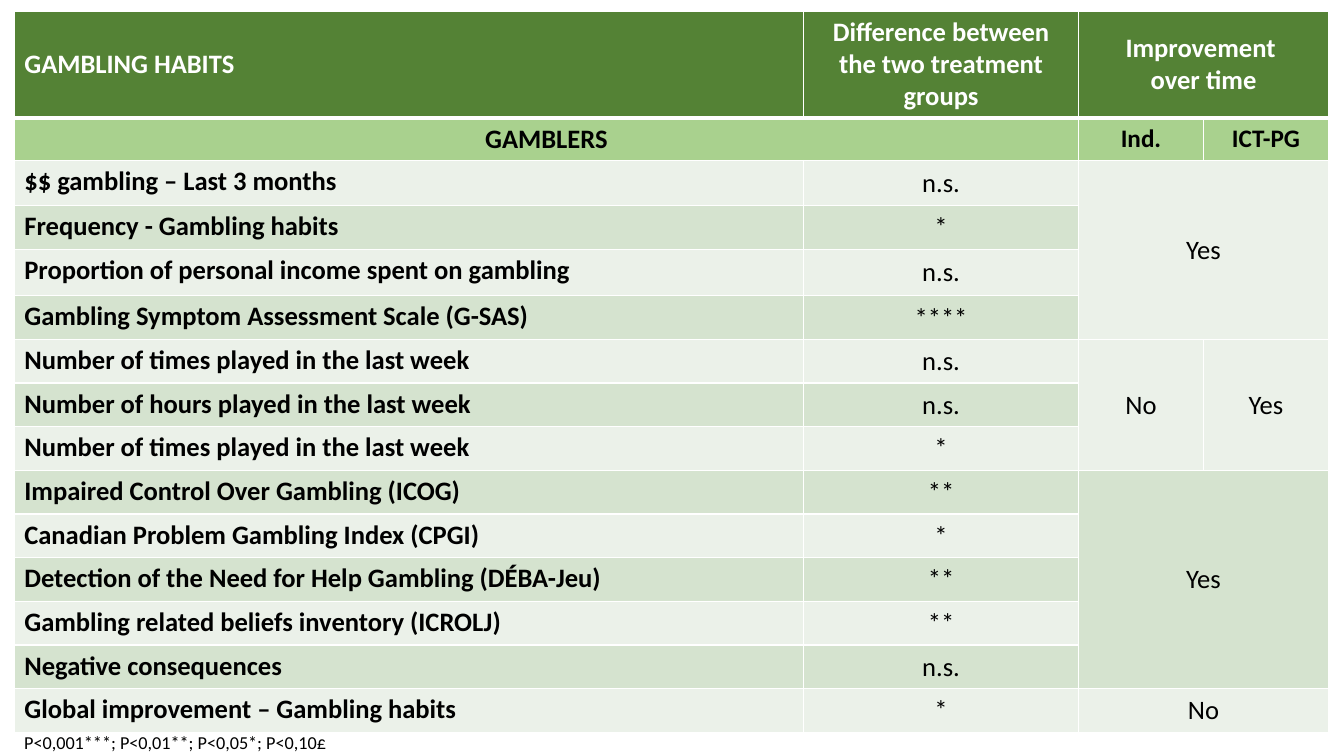
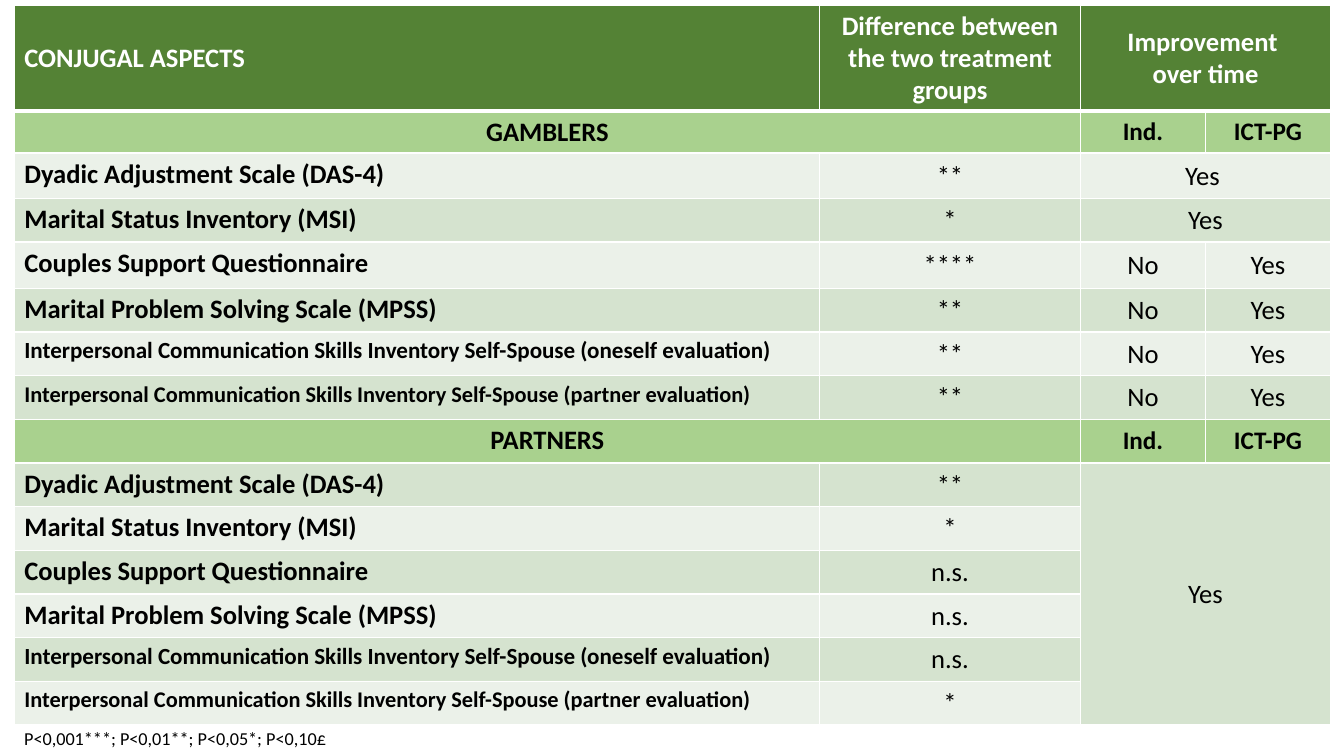
import dataclasses
import typing

import pptx
import pptx.dml.color
import pptx.enum.text
import pptx.oxml
import pptx.oxml.ns
import pptx.slide
import pptx.table
import pptx.util

Cm = pptx.util.Cm
Pt = pptx.util.Pt
ALIGN = pptx.enum.text.PP_ALIGN
ANCHOR = pptx.enum.text.MSO_ANCHOR


@dataclasses.dataclass(frozen=True)
class Theme:
    font: str = "Calibri"
    header: str = "548235"
    band: str = "A9D18E"
    light: str = "EBF1E9"
    dark: str = "D5E3CF"
    white: str = "FFFFFF"
    black: str = "000000"
    body_size: float = 19
    group_size: float = 18
    oneself_size: float = 16.5
    partner_size: float = 16
    note_size: float = 13
    thin: float = 1
    thick: float = 3


THEME = Theme()


class Outcome(typing.NamedTuple):
    text: str
    rows: int = 1
    columns: int = 2


class Measure(typing.NamedTuple):
    label: str
    difference: str
    outcomes: tuple[Outcome, ...] = ()
    size: float = THEME.body_size


class Band(typing.NamedTuple):
    label: str
    anchor: ANCHOR = ANCHOR.MIDDLE


@dataclasses.dataclass(frozen=True)
class ResultsPage:
    title: str
    top: float
    note_top: float
    widths: tuple[float, ...]
    rows: tuple[Band | Measure, ...]


LEFT = 0.36
ROW_HEIGHT = 1.1
SPECIAL_HEIGHTS = {0: 2.65, 1: 1.06, 2: 1.14, 4: 1.17}
NOTE = "P<0,001***; P<0,01**; P<0,05*; P<0,10£"
VALUE_MARGINS = {
    "margin_left": Cm(0.02),
    "margin_top": Cm(0.02),
    "margin_right": Cm(0.02),
    "margin_bottom": Cm(0),
}
YES = (Outcome("Yes"),)
NO_YES = (Outcome("No", columns=1), Outcome("Yes", columns=1))


def conjugal_measures(
    differences: typing.Sequence[str],
    outcomes: typing.Sequence[tuple[Outcome, ...]],
) -> tuple[Measure, ...]:
    """Give the six questionnaires, which gamblers and partners share."""
    skills = "Interpersonal Communication Skills Inventory Self-Spouse"
    labels = (
        ("Dyadic Adjustment Scale (DAS-4)", THEME.body_size),
        ("Marital Status Inventory (MSI)", THEME.body_size),
        ("Couples Support Questionnaire", THEME.body_size),
        ("Marital Problem Solving Scale (MPSS)", THEME.body_size),
        (f"{skills} (oneself evaluation)", THEME.oneself_size),
        (f"{skills} (partner evaluation)", THEME.partner_size),
    )
    return tuple(
        Measure(label, difference, outcome, size)
        for (label, size), difference, outcome in zip(labels, differences, outcomes)
    )


PAGES = (
    ResultsPage(
        "GAMBLING HABITS", 0.28, 18.31, (19.89, 6.93, 3.15, 3.15),
        (
            Band("GAMBLERS"),
            Measure("$$ gambling – Last 3 months", "n.s.", (Outcome("Yes", 4),)),
            Measure("Frequency - Gambling habits", "*"),
            Measure("Proportion of personal income spent on gambling", "n.s."),
            Measure("Gambling Symptom Assessment Scale (G-SAS)", "****"),
            Measure("Number of times played in the last week", "n.s.",
                    (Outcome("No", 3, 1), Outcome("Yes", 3, 1))),
            Measure("Number of hours played in the last week", "n.s."),
            Measure("Number of times played in the last week", "*"),
            Measure("Impaired Control Over Gambling (ICOG)", "**",
                    (Outcome("Yes", 5),)),
            Measure("Canadian Problem Gambling Index (CPGI)", "*"),
            Measure("Detection of the Need for Help Gambling (DÉBA-Jeu)", "**"),
            Measure("Gambling related beliefs inventory (ICROLJ)", "**"),
            Measure("Negative consequences", "n.s."),
            Measure("Global improvement – Gambling habits", "*", (Outcome("No"),)),
        ),
    ),
    ResultsPage(
        "CONJUGAL ASPECTS", 0.13, 18.19, (20.29, 6.58, 3.15, 3.15),
        (
            Band("GAMBLERS"),
            *conjugal_measures(
                ("**", "*", "****", "**", "**", "**"),
                ((Outcome("Yes "),), YES, *[NO_YES] * 4),
            ),
            Band("PARTNERS", ANCHOR.TOP),
            *conjugal_measures(
                ("**", "*", "n.s.", "n.s.", "n.s.", "*"),
                ((Outcome("Yes", 6),), *[()] * 5),
            ),
        ),
    ),
)


def style_text(frame: pptx.text.text.TextFrame, size: float, color: str = THEME.black,
               bold: bool = False, align: ALIGN = ALIGN.LEFT) -> None:
    font_format = {"name": THEME.font, "size": Pt(size), "bold": bold}
    for para in frame.paragraphs:
        para.alignment = align
        for span in para.runs:
            for name, value in font_format.items():
                setattr(span.font, name, value)
            span.font.color.rgb = pptx.dml.color.RGBColor.from_string(color)


def write_cell(cell: pptx.table._Cell, text: str, size: float = THEME.body_size,
               color: str = THEME.black, bold: bool = True,
               align: ALIGN = ALIGN.CENTER, anchor: ANCHOR = ANCHOR.MIDDLE) -> None:
    cell.text = text
    cell.vertical_anchor = anchor
    style_text(cell.text_frame, size, color, bold, align)


def write_value(cell: pptx.table._Cell, text: str) -> None:
    write_cell(cell, text, bold=False)
    for name, value in VALUE_MARGINS.items():
        setattr(cell, name, value)


def paint_cell(cell: pptx.table._Cell, color: str, top: float, bottom: float) -> None:
    """Give the cell white borders, then its fill, in the order the schema asks."""
    properties = cell._tc.get_or_add_tcPr()
    widths = {"L": THEME.thin, "R": THEME.thin, "T": top, "B": bottom}
    for side, width in widths.items():
        properties.append(pptx.oxml.parse_xml(
            f'<a:ln{side} {pptx.oxml.ns.nsdecls("a")} w="{Pt(width)}">'
            f'<a:solidFill><a:srgbClr val="{THEME.white}"/></a:solidFill></a:ln{side}>'
        ))
    cell.fill.solid()
    cell.fill.fore_color.rgb = pptx.dml.color.RGBColor.from_string(color)


def paint_row(table: pptx.table.Table, row: int, color: str) -> None:
    top = THEME.thick if row == 1 else THEME.thin
    bottom = THEME.thick if row == 0 else THEME.thin
    for column in range(len(table.columns)):
        paint_cell(table.cell(row, column), color, top, bottom)


def fill_header(table: pptx.table.Table, title: str) -> None:
    paint_row(table, 0, THEME.header)
    table.cell(0, 2).merge(table.cell(0, 3))
    texts = (title, "Difference between the two treatment groups",
             "Improvement \nover time")
    for column, text in enumerate(texts):
        write_cell(table.cell(0, column), text, color=THEME.white,
                   align=ALIGN.CENTER if column else ALIGN.LEFT)


def fill_band(table: pptx.table.Table, row: int, band: Band) -> None:
    paint_row(table, row, THEME.band)
    table.cell(row, 0).merge(table.cell(row, 1))
    write_cell(table.cell(row, 0), band.label, anchor=band.anchor)
    for column, group in enumerate(("Ind.", "ICT-PG"), start=2):
        write_cell(table.cell(row, column), group, THEME.group_size)


def fill_measure(table: pptx.table.Table, row: int, measure: Measure) -> None:
    paint_row(table, row, THEME.dark if row % 2 else THEME.light)
    write_cell(table.cell(row, 0), measure.label, measure.size,
               align=ALIGN.LEFT, anchor=ANCHOR.TOP)
    write_value(table.cell(row, 1), measure.difference)
    column = 2
    for outcome in measure.outcomes:
        cell = table.cell(row, column)
        if outcome.rows * outcome.columns > 1:
            cell.merge(table.cell(row + outcome.rows - 1, column + outcome.columns - 1))
        write_value(cell, outcome.text)
        column += outcome.columns


def add_results_table(page: pptx.slide.Slide, results: ResultsPage) -> None:
    row_count = len(results.rows) + 1
    heights = [SPECIAL_HEIGHTS.get(row, ROW_HEIGHT) for row in range(row_count)]
    table = page.shapes.add_table(
        row_count, len(results.widths), Cm(LEFT), Cm(results.top),
        Cm(sum(results.widths)), Cm(sum(heights)),
    ).table
    table.first_row = table.horz_banding = False
    for column, width in zip(table.columns, results.widths):
        column.width = Cm(width)
    for table_row, height in zip(table.rows, heights):
        table_row.height = Cm(height)
    fill_header(table, results.title)
    for row, entry in enumerate(results.rows, start=1):
        if isinstance(entry, Band):
            fill_band(table, row, entry)
        else:
            fill_measure(table, row, entry)


def add_note(page: pptx.slide.Slide, top: float) -> None:
    box = page.shapes.add_textbox(Cm(LEFT), Cm(top), Cm(8.52), Cm(0.81))
    frame = box.text_frame
    frame.word_wrap = True
    frame.auto_size = pptx.enum.text.MSO_AUTO_SIZE.SHAPE_TO_FIT_TEXT
    frame.text = NOTE
    style_text(frame, THEME.note_size)


def main() -> None:
    deck = pptx.Presentation()
    deck.slide_width, deck.slide_height = Cm(33.87), Cm(19.05)
    blank = deck.slide_layouts.get_by_name("Blank")
    for results in PAGES:
        page = deck.slides.add_slide(blank)
        add_results_table(page, results)
        add_note(page, results.note_top)
    deck.save("out.pptx")


if __name__ == "__main__":
    main()
